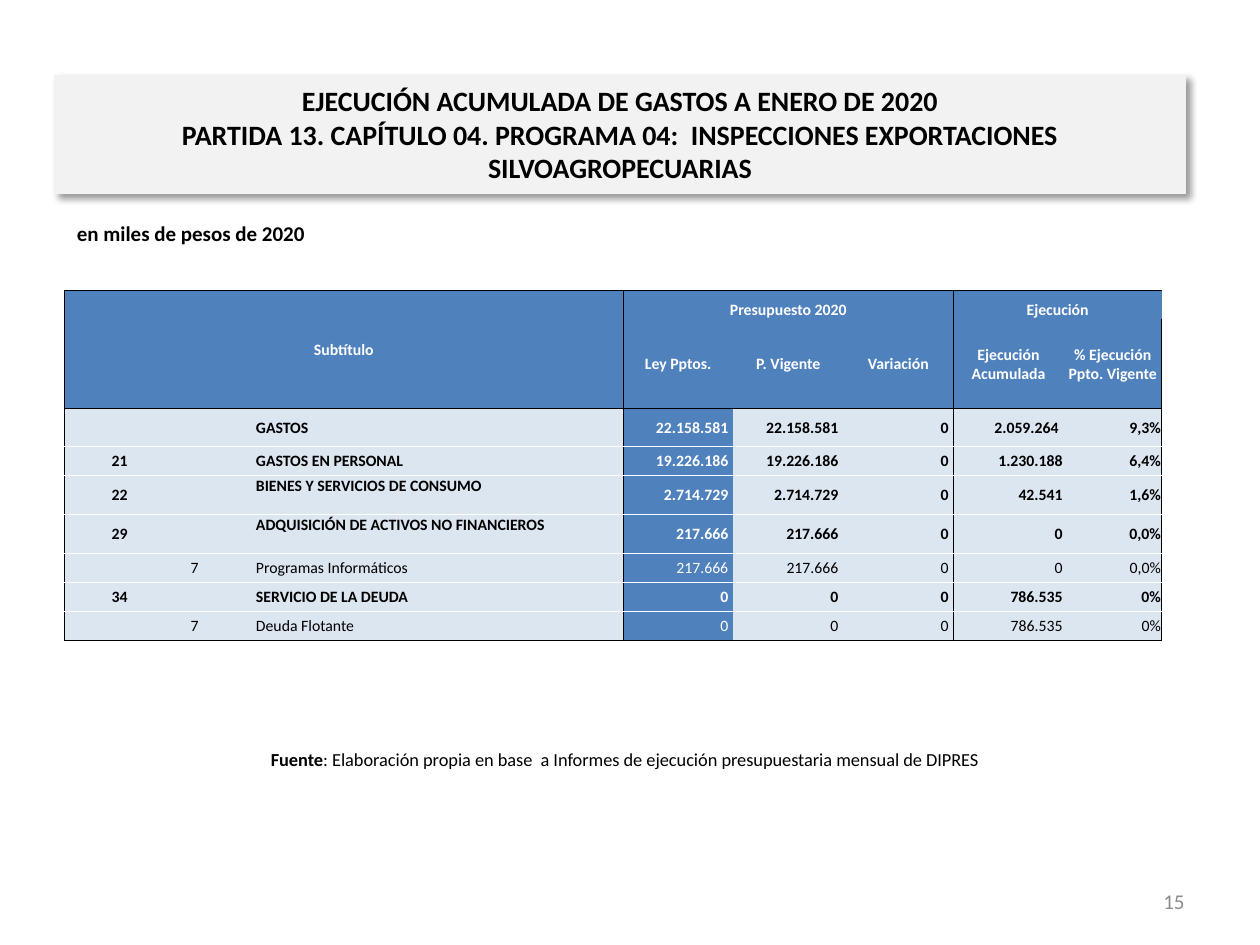
from lxml import etree
from pptx import Presentation
from pptx.dml.color import RGBColor
from pptx.enum import shapes, text
from pptx.oxml import ns
from pptx.util import Cm, Pt

TITLE = [
    "EJECUCIÓN ACUMULADA DE GASTOS A ENERO DE 2020",
    "PARTIDA 13. CAPÍTULO 04. PROGRAMA 04:  INSPECCIONES EXPORTACIONES SILVOAGROPECUARIAS",
]
UNITS = "en miles de pesos de 2020"
SOURCE = ("Fuente", ": Elaboración propia en base  a Informes de ejecución presupuestaria mensual de DIPRES")
NUMBER = "15"

GROUPS = [
    ("Subtítulo", (0, 0), (1, 3), "middle"),
    ("Presupuesto 2020", (0, 4), (0, 6), "bottom"),
    ("Ejecución", (0, 7), (0, 8), "bottom"),
]
HEADINGS = ["Ley Pptos.", "P. Vigente", "Variación", "Ejecución Acumulada", "% Ejecución Ppto. Vigente"]
ROWS = [
    ("", "", "", "GASTOS", "22.158.581", "22.158.581", "0", "2.059.264", "9,3%"),
    ("21", "", "", "GASTOS EN PERSONAL", "19.226.186", "19.226.186", "0", "1.230.188", "6,4%"),
    ("22", "", "", "BIENES Y SERVICIOS DE CONSUMO", "2.714.729", "2.714.729", "0", "42.541", "1,6%"),
    ("29", "", "", "ADQUISICIÓN DE ACTIVOS NO FINANCIEROS", "217.666", "217.666", "0", "0", "0,0%"),
    ("", "7", "", "Programas Informáticos", "217.666", "217.666", "0", "0", "0,0%"),
    ("34", "", "", "SERVICIO DE LA DEUDA", "0", "0", "0", "786.535", "0%"),
    ("", "7", "", "Deuda Flotante", "0", "0", "0", "786.535", "0%"),
]
COLUMN_WIDTHS = [2.22, 0.81, 0.81, 7.42, 2.22, 2.22, 2.22, 2.22, 1.98]
ROW_HEIGHTS = [0.58, 1.8, 0.76, 0.58, 0.79, 0.79, 0.58, 0.58, 0.58]
HEADER_ROWS = 2
TALL_ROWS = (4, 5)
GROUP_STARTS = (0, 4, 7, 9)
NAME_COLUMN, LAW_COLUMN, DONE_COLUMN = 3, 4, 7

THEME = {
    "font": "Calibri",
    "black": "000000", "white": "FFFFFF", "grey": "8C8C8C", "panel": "F2F2F2",
    "strong": "4F81BD", "pale": "DCE6F1",
    "title": 16, "body": 12, "source": 10.5, "cell": 9,
}
ALIGN = {
    "left": text.PP_ALIGN.LEFT, "center": text.PP_ALIGN.CENTER,
    "right": text.PP_ALIGN.RIGHT, "justify": text.PP_ALIGN.JUSTIFY,
}
ANCHOR = {
    "top": text.MSO_ANCHOR.TOP, "middle": text.MSO_ANCHOR.MIDDLE, "bottom": text.MSO_ANCHOR.BOTTOM,
}


def color(name):
    return RGBColor.from_string(THEME[name])


def apply(target, **values):
    for name, value in values.items():
        setattr(target, name, value)


def add_span(para, words, size, ink="black", bold=False):
    span = para.add_run()
    span.text = words
    apply(span.font, name=THEME["font"], size=Pt(THEME[size]), bold=bold)
    span.font.color.rgb = color(ink)


def add_text(page, place, align, anchor="middle"):
    box = page.shapes.add_textbox(*map(Cm, place))
    apply(box.text_frame, word_wrap=True, vertical_anchor=ANCHOR[anchor])
    para = box.text_frame.paragraphs[0]
    para.alignment = ALIGN[align]
    return para


def add_title(page):
    box = page.shapes.add_shape(shapes.MSO_SHAPE.RECTANGLE, *map(Cm, (1.1, 1.52, 22.8, 2.37)))
    box.fill.solid()
    box.fill.fore_color.rgb = color("panel")
    box.line.color.rgb = color("panel")
    box.line.width = Pt(0.75)
    box.shadow.inherit = False
    effects = box.element.spPr.find(ns.qn("a:effectLst"))
    shadow = etree.SubElement(effects, ns.qn("a:outerShdw"), blurRad=str(Pt(4)), dist=str(Pt(3)),
                              dir="2700000", algn="tl", rotWithShape="0")
    tint = etree.SubElement(shadow, ns.qn("a:srgbClr"), val=THEME["black"])
    etree.SubElement(tint, ns.qn("a:alpha"), val="40000")
    apply(box.text_frame, word_wrap=True, vertical_anchor=ANCHOR["middle"],
          margin_left=Cm(0.28), margin_right=Cm(0.28))
    para = box.text_frame.paragraphs[0]
    para.alignment = ALIGN["center"]
    for index, line in enumerate(TITLE):
        if index:
            para.add_line_break()
        add_span(para, line, "title", bold=True)


def edge_ink(position, header, last):
    if position in (0, header, last):
        return "black"
    return "white" if position > header else None


def add_borders(cell, row, column):
    last = len(ROW_HEIGHTS)
    inks = {
        "lnL": "black" if column in GROUP_STARTS else None,
        "lnR": "black" if column + 1 in GROUP_STARTS else None,
        "lnT": edge_ink(row, HEADER_ROWS, last),
        "lnB": edge_ink(row + 1, HEADER_ROWS, last),
    }
    properties = cell._tc.get_or_add_tcPr()
    for side, ink in inks.items():
        line = etree.SubElement(properties, ns.qn("a:" + side), w=str(Pt(0.5)))
        if ink:
            fill = etree.SubElement(line, ns.qn("a:solidFill"))
            etree.SubElement(fill, ns.qn("a:srgbClr"), val=THEME[ink])
        else:
            etree.SubElement(line, ns.qn("a:noFill"))


def fill_cell(cell, words, align, anchor="middle", ink="black", bold=True):
    cell.vertical_anchor = ANCHOR[anchor]
    para = cell.text_frame.paragraphs[0]
    para.alignment = ALIGN[align]
    if words:
        add_span(para, words, "cell", ink, bold)
    else:
        etree.SubElement(para._p, ns.qn("a:endParaRPr"), sz=str(THEME["cell"] * 100))


def add_budget(page):
    frame = page.shapes.add_table(len(ROW_HEIGHTS), len(COLUMN_WIDTHS), Cm(1.3), Cm(5.86),
                                  Cm(sum(COLUMN_WIDTHS)), Cm(sum(ROW_HEIGHTS)))
    table = frame.table
    apply(table, first_row=False, horz_banding=False)
    for column, width in zip(table.columns, COLUMN_WIDTHS):
        column.width = Cm(width)
    for row, height in zip(table.rows, ROW_HEIGHTS):
        row.height = Cm(height)

    for row in range(len(ROW_HEIGHTS)):
        for column in range(len(COLUMN_WIDTHS)):
            cell = table.cell(row, column)
            add_borders(cell, row, column)
            strong = row < HEADER_ROWS or column == LAW_COLUMN
            cell.fill.solid()
            cell.fill.fore_color.rgb = color("strong" if strong else "pale")
            apply(cell, margin_left=Cm(0.02), margin_right=Cm(0.02), margin_top=Cm(0.02), margin_bottom=0)

    for words, start, end, anchor in GROUPS:
        table.cell(*start).merge(table.cell(*end))
        fill_cell(table.cell(*start), words, "center", anchor, "white")
    for column, words in enumerate(HEADINGS, LAW_COLUMN):
        fill_cell(table.cell(1, column), words, "center", ink="white")

    for row, values in enumerate(ROWS, HEADER_ROWS):
        for column, words in enumerate(values):
            cell = table.cell(row, column)
            align = "center" if column < NAME_COLUMN else "justify" if column == NAME_COLUMN else "right"
            anchor = "top" if column == NAME_COLUMN and row in TALL_ROWS else "middle"
            ink = "white" if column == LAW_COLUMN else "black"
            fill_cell(cell, words, align, anchor, ink, bold=not values[1])
            if LAW_COLUMN <= column < DONE_COLUMN or (row, column) == (HEADER_ROWS, DONE_COLUMN):
                cell.margin_right = Cm(0.1)


def main():
    deck = Presentation()
    apply(deck, slide_width=Cm(25.4), slide_height=Cm(19.05))
    page = deck.slides.add_slide(deck.slide_layouts[6])
    source = add_text(page, (1.3, 14.94, 22.6, 0.74), "center")
    add_span(source, SOURCE[0], "source", bold=True)
    add_span(source, SOURCE[1], "source")
    add_span(add_text(page, (18.21, 17.65, 5.92, 1.02), "right"), NUMBER, "body", "grey")
    add_span(add_text(page, (1.3, 4.32, 20.83, 0.99), "left", "top"), UNITS, "body", bold=True)
    add_title(page)
    add_budget(page)
    deck.save("out.pptx")


if __name__ == "__main__":
    main()
